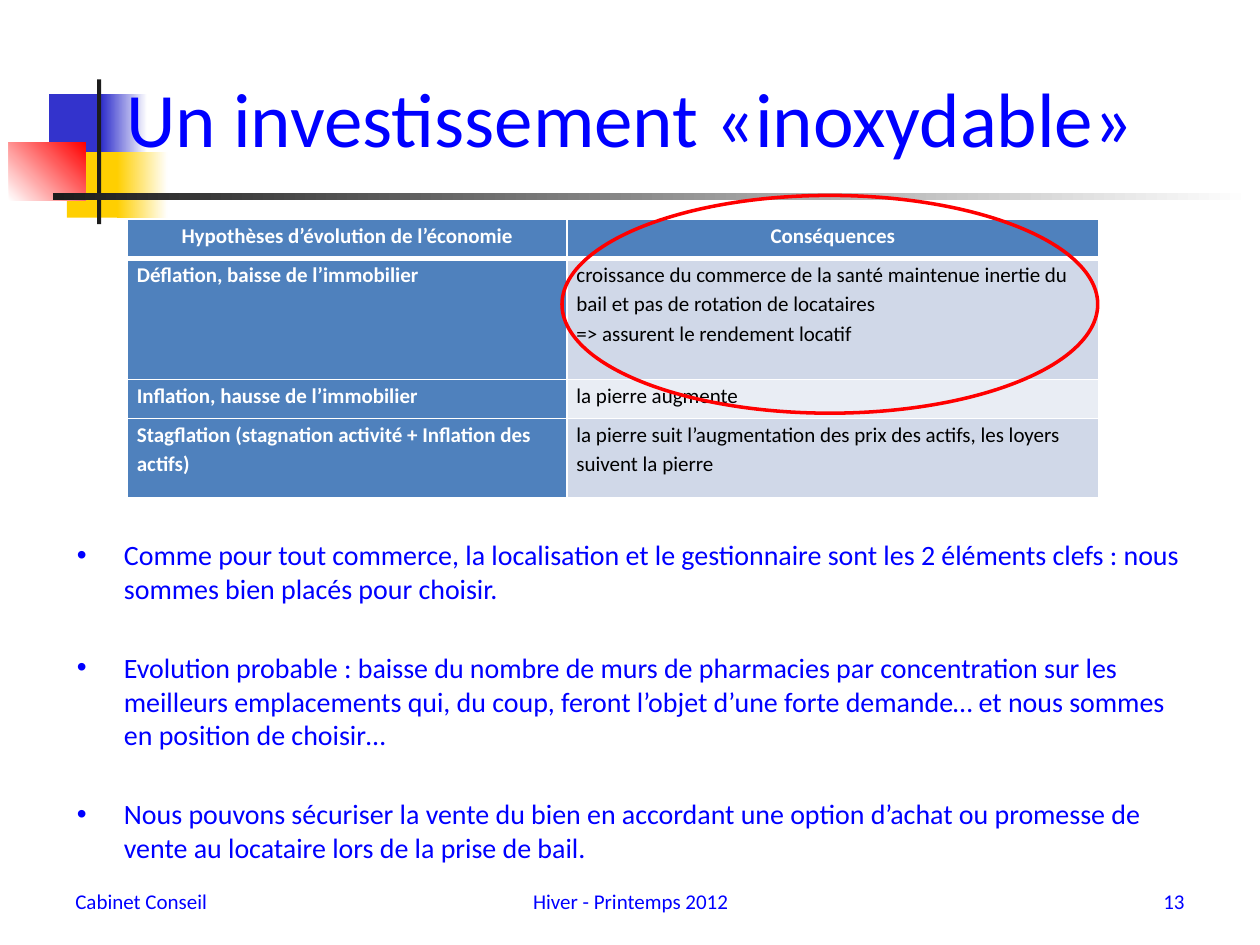
"""Build the slide on a rust-proof investment: title, table, ring and bullets."""
from dataclasses import dataclass
from typing import Optional

from lxml.etree import SubElement as Sub
from pptx import Presentation
from pptx.dml.color import RGBColor as Rgb
from pptx.enum.shapes import MSO_SHAPE as Kind
from pptx.enum.text import MSO_ANCHOR as Anchor, PP_ALIGN as Align
from pptx.oxml import parse_xml
from pptx.oxml.ns import nsdecls, qn
from pptx.util import Cm, Pt

FONT = "Calibri"
HUES = {
    "text": "0000FF", "white": "FFFFFF", "black": "000000", "red": "FF0000",
    "blue": "3333CC", "gold": "FFCF01", "ink": "1C1C1C",
    "head": "4F81BD", "dark": "D0D8E8", "light": "E9EDF4",
}


@dataclass
class Block:
    left: float
    top: float
    width: float
    height: float
    hue: str
    fade: Optional[str] = None
    angle: int = 0


@dataclass
class Label:
    text: str
    left: float
    width: float
    align: Align


@dataclass
class Row:
    height: float
    cells: tuple[str, str]
    fill: str


BLOCKS = [
    Block(0.99, 1.9, 1.22, 1.32, "blue"),
    Block(2.06, 1.9, 0.91, 1.32, "blue", "white"),
    Block(1.35, 3.07, 1.17, 1.32, "gold"),
    Block(2.36, 3.07, 1.02, 1.32, "gold", "white"),
    Block(0.18, 2.87, 1.55, 1.17, "white", "red", 45),
    Block(1.96, 1.6, 0.08, 2.92, "ink"),
    Block(1.07, 3.89, 24.16, 0.15, "ink", "white"),
]
LABELS = [
    Label("Cabinet Conseil", 1.27, 5.92, Align.LEFT),
    Label("Hiver - Printemps 2012", 8.69, 8.05, Align.CENTER),
    Label("13", 18.21, 5.92, Align.RIGHT),
]
ROWS = [
    Row(0.79, ("Hypothèses d’évolution de l’économie", "Conséquences"), "head"),
    Row(2.44, ("Déflation, baisse de l’immobilier",
               "croissance du commerce de la santé maintenue inertie du bail et pas "
               "de rotation de locataires\n=> assurent le rendement locatif"), "dark"),
    Row(0.79, ("Inflation, hausse de l’immobilier", "la pierre augmente"), "light"),
    Row(1.6, ("Stagflation (stagnation activité + Inflation des actifs)",
              "la pierre suit l’augmentation des prix des actifs, "
              "les loyers suivent la pierre"), "dark"),
]
POINTS = [
    "Comme pour tout commerce, la localisation et le gestionnaire sont les 2 "
    "éléments clefs : nous sommes bien placés pour choisir.",
    "Evolution probable : baisse du nombre de murs de pharmacies par concentration "
    "sur les meilleurs emplacements qui, du coup, feront l’objet d’une forte "
    "demande… et nous sommes en position de choisir…",
    "Nous pouvons sécuriser la vente du bien en accordant une option d’achat ou "
    "promesse de vente au locataire lors de la prise de bail.",
]


def tint(name: str) -> Rgb:
    """Return the named colour."""
    return Rgb.from_string(HUES[name])


def style(frame, size: int, hue: str = "text", bold: bool = False,
          align: Align = Align.LEFT) -> None:
    """Format every run of a text frame."""
    for para in frame.paragraphs:
        para.alignment = align
        for run in para.runs:
            font = run.font
            font.name, font.size, font.bold = FONT, Pt(size), bold
            font.color.rgb = tint(hue)


def draw_block(slide, item: Block) -> None:
    """Draw one plain or fading rectangle."""
    shape = slide.shapes.add_shape(Kind.RECTANGLE, Cm(item.left), Cm(item.top),
                                   Cm(item.width), Cm(item.height))
    shape.shadow.inherit = False
    shape.line.fill.background()
    if item.fade is None:
        shape.fill.solid()
        shape.fill.fore_color.rgb = tint(item.hue)
        return
    shape.fill.gradient()
    shape.fill.gradient_angle = item.angle
    for stop, hue in zip(shape.fill.gradient_stops, (item.hue, item.fade)):
        stop.color.rgb = tint(hue)


def draw_title(slide, text: str) -> None:
    """Fill the title and bring it in front of the blocks."""
    title = slide.shapes.title
    title.left, title.top, title.width, title.height = map(Cm, (1.27, 0.76, 22.86, 3.18))
    title.text_frame.text = text
    title.text_frame.vertical_anchor = Anchor.MIDDLE
    style(title.text_frame, 44, align=Align.CENTER)
    title.element.getparent().append(title.element)


def draw_points(slide, points: list[str]) -> None:
    """Write the bullet list."""
    frame = slide.shapes.add_textbox(Cm(1.3), Cm(10.72), Cm(22.86), Cm(5.89)).text_frame
    frame.word_wrap = True
    frame.text = "\n".join(points)
    style(frame, 16)
    for rank, para in enumerate(frame.paragraphs):
        para.space_before = Pt(26 if rank else 0)
        props = para._p.get_or_add_pPr()
        props.set("marL", str(Cm(0.95)))
        props.set("indent", str(-Cm(0.95)))
        Sub(props, qn("a:buFont"), typeface="Arial")
        Sub(props, qn("a:buChar"), char="•")


def draw_label(slide, item: Label) -> None:
    """Write one part of the footer."""
    frame = slide.shapes.add_textbox(Cm(item.left), Cm(17.65),
                                     Cm(item.width), Cm(1.02)).text_frame
    frame.word_wrap = True
    frame.vertical_anchor = Anchor.MIDDLE
    frame.text = item.text
    style(frame, 12, align=item.align)


def edge(cell, top: int, base: int) -> None:
    """Give a cell white borders, in points."""
    props = cell._tc.get_or_add_tcPr()
    for spot, (side, width) in enumerate(zip("LRTB", (1, 1, top, base))):
        props.insert(spot, parse_xml(
            f'<a:ln{side} {nsdecls("a")} w="{Pt(width)}"><a:solidFill>'
            f'<a:srgbClr val="{HUES["white"]}"/></a:solidFill></a:ln{side}>'))


def draw_table(slide, rows: list[Row], widths: tuple[float, ...]) -> None:
    """Draw the table of cases and their effects."""
    high = sum(row.height for row in rows)
    table = slide.shapes.add_table(len(rows), len(widths), Cm(2.57), Cm(4.42),
                                   Cm(sum(widths)), Cm(high)).table
    for col, width in zip(table.columns, widths):
        col.width = Cm(width)
    for i, row in enumerate(rows):
        table.rows[i].height = Cm(row.height)
        for j, text in enumerate(row.cells):
            cell = table.cell(i, j)
            strong = i == 0 or j == 0
            cell.margin_left = cell.margin_right = Cm(0.19)
            cell.margin_top = cell.margin_bottom = 0
            cell.fill.solid()
            cell.fill.fore_color.rgb = tint("head" if strong else row.fill)
            cell.text_frame.text = text
            style(cell.text_frame, 12, "white" if strong else "black", strong,
                  Align.LEFT if i else Align.CENTER)
            for para in cell.text_frame.paragraphs:
                para.line_spacing = 1.15
            edge(cell, 3 if i == 1 else 1, 1 if i else 3)


def draw_ring(slide) -> None:
    """Circle the key case in red."""
    ring = slide.shapes.add_shape(Kind.OVAL, Cm(11.33), Cm(3.94), Cm(10.8), Cm(4.39))
    ring.shadow.inherit = False
    ring.fill.background()
    ring.line.color.rgb = tint("red")
    ring.line.width = Pt(2)


def main() -> None:
    """Build and save the slide."""
    deck = Presentation()
    deck.slide_width, deck.slide_height = Cm(25.4), Cm(19.05)
    slide = deck.slides.add_slide(deck.slide_layouts[5])
    for block in BLOCKS:
        draw_block(slide, block)
    draw_title(slide, "Un investissement «inoxydable»")
    draw_points(slide, POINTS)
    for label in LABELS:
        draw_label(slide, label)
    draw_table(slide, ROWS, (8.86, 10.72))
    draw_ring(slide)
    deck.save("out.pptx")


if __name__ == "__main__":
    main()
